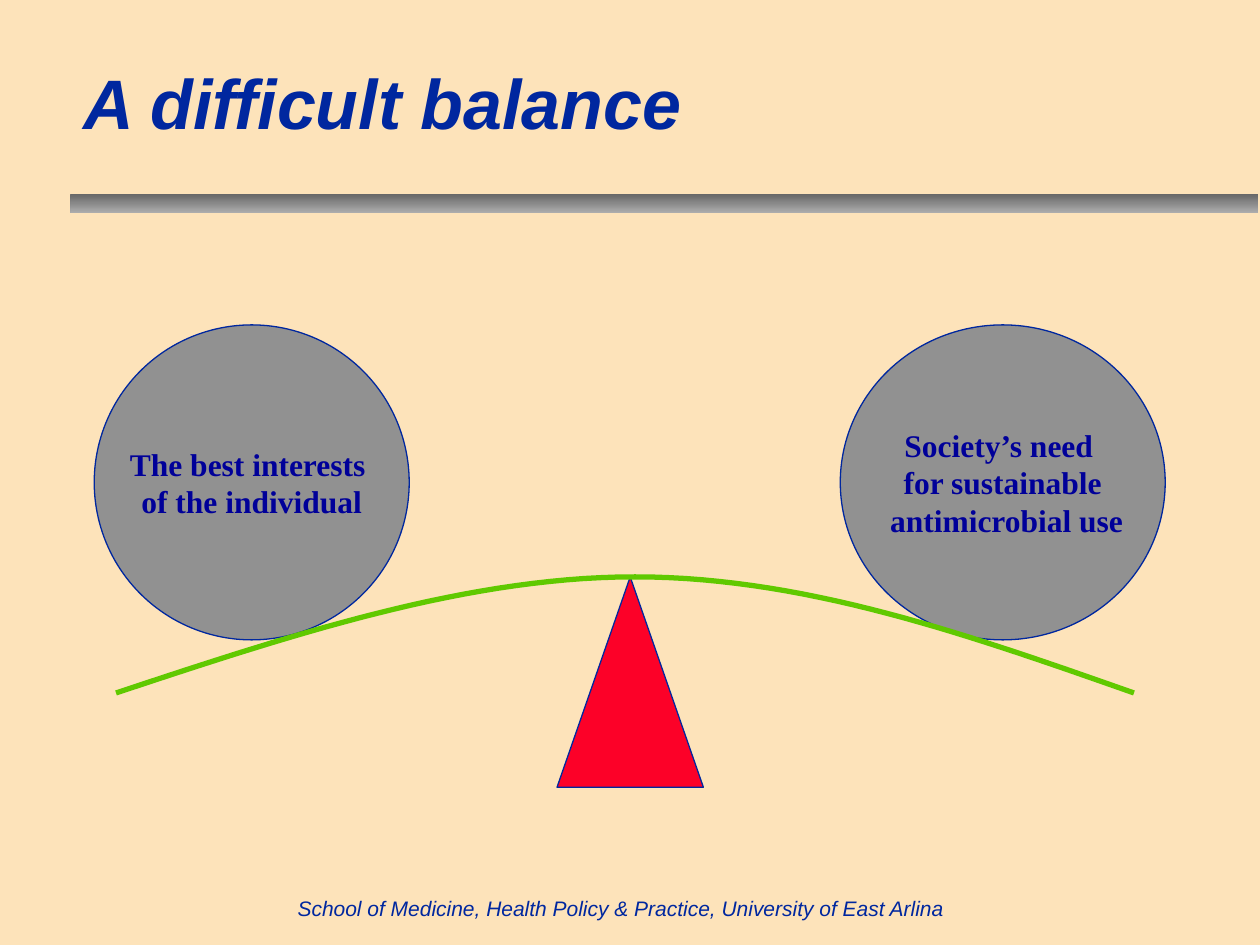
from dataclasses import dataclass

from pptx import Presentation
from pptx import util as u
from pptx.dml import color as dml
from pptx.enum import shapes, text


@dataclass(frozen=True)
class Theme:
    paper: str = "FDE3BA"
    navy: str = "00279F"
    label: str = "000099"
    weight: str = "919191"
    pivot: str = "FC0128"
    beam: str = "60C900"
    bar_top: str = "666666"
    bar_bottom: str = "ACACAC"
    sans: str = "Arial"
    serif: str = "Times New Roman"
    title_size: int = 40
    label_size: int = 18
    footer_size: int = 12
    outline: float = 0.75
    beam_width: int = 3


def rgb(value):
    return dml.RGBColor.from_string(value)


def apply(target, values):
    for name, value in values.items():
        setattr(target, name, value)


def curve_point(controls, t):
    weights = ((1 - t) ** 3, 3 * t * (1 - t) ** 2, 3 * t * t * (1 - t), t ** 3)
    return tuple(
        u.Cm(sum(w * point[axis] for w, point in zip(weights, controls)))
        for axis in (0, 1)
    )


class SlideBuilder:
    def __init__(self, deck, theme):
        self.theme = theme
        self.page = deck.slides.add_slide(deck.slide_layouts[5])
        background = self.page.background.fill
        background.solid()
        background.fore_color.rgb = rgb(theme.paper)

    def set_text(self, box, lines, align, frame, font, color):
        apply(box.text_frame, frame)
        box.text_frame.text = "\n".join(lines)
        for para in box.text_frame.paragraphs:
            para.alignment = align
            for span in para.runs:
                apply(span.font, font)
                span.font.color.rgb = rgb(color)

    def title(self, words, area):
        box = self.page.shapes.title
        apply(box, dict(zip(("left", "top", "width", "height"), map(u.Cm, area))))
        frame = {"vertical_anchor": text.MSO_ANCHOR.MIDDLE,
                 "auto_size": text.MSO_AUTO_SIZE.NONE, "word_wrap": True}
        font = {"name": self.theme.sans, "size": u.Pt(self.theme.title_size),
                "bold": True, "italic": True}
        self.set_text(box, [words], text.PP_ALIGN.LEFT, frame, font, self.theme.navy)

    def footer(self, words, area):
        box = self.page.shapes.add_textbox(*map(u.Cm, area))
        font = {"name": self.theme.sans, "size": u.Pt(self.theme.footer_size),
                "italic": True}
        self.set_text(box, [words], text.PP_ALIGN.CENTER, {"word_wrap": True},
                      font, self.theme.navy)

    def bar(self, area):
        box = self.page.shapes.add_shape(shapes.MSO_SHAPE.RECTANGLE, *map(u.Cm, area))
        box.shadow.inherit = False
        box.line.fill.background()
        box.fill.gradient()
        box.fill.gradient_angle = 270
        colors = (self.theme.bar_top, self.theme.bar_bottom)
        for stop, color in zip(box.fill.gradient_stops, colors):
            stop.color.rgb = rgb(color)

    def solid(self, kind, area, color):
        box = self.page.shapes.add_shape(kind, *map(u.Cm, area))
        box.shadow.inherit = False
        box.fill.solid()
        box.fill.fore_color.rgb = rgb(color)
        box.line.color.rgb = rgb(self.theme.navy)
        box.line.width = u.Pt(self.theme.outline)
        return box

    def pivot(self, area):
        self.solid(shapes.MSO_SHAPE.ISOSCELES_TRIANGLE, area, self.theme.pivot)

    def weight(self, lines, area):
        box = self.solid(shapes.MSO_SHAPE.OVAL, area, self.theme.weight)
        frame = {"vertical_anchor": text.MSO_ANCHOR.MIDDLE, "word_wrap": False}
        font = {"name": self.theme.serif, "size": u.Pt(self.theme.label_size),
                "bold": True}
        self.set_text(box, lines, text.PP_ALIGN.CENTER, frame, font, self.theme.label)

    def beam(self, halves, steps=30):
        points = [curve_point(half, step / steps)
                  for half in halves for step in range(1, steps + 1)]
        start = curve_point(halves[0], 0)
        outline = self.page.shapes.build_freeform(*start)
        outline.add_line_segments(points, close=False)
        curve = outline.convert_to_shape()
        curve.shadow.inherit = False
        curve.fill.background()
        curve.line.color.rgb = rgb(self.theme.beam)
        curve.line.width = u.Pt(self.theme.beam_width)


def main():
    deck = Presentation()
    apply(deck, {"slide_width": u.Cm(25.4), "slide_height": u.Cm(19.05)})
    slide = SlideBuilder(deck, Theme())
    slide.bar((1.42, 3.91, 23.95, 0.38))
    slide.footer("School of Medicine, Health Policy & Practice, University of East Arlina",
                 (0.05, 17.93, 24.94, 0.76))
    slide.title("A difficult balance", (1.42, 0.43, 22.56, 3.23))
    slide.pivot((11.23, 11.63, 2.95, 4.24))
    slide.weight(["The best interests ", "of the individual"], (1.9, 6.55, 6.35, 6.35))
    slide.weight(["Society’s need ", "for sustainable", " antimicrobial use"],
                 (16.94, 6.55, 6.55, 6.35))
    top = (12.8, 11.63)
    slide.beam([
        ((2.34, 13.97), (5.87, 12.8), (9.4, 11.63), top),
        (top, (16.23, 11.63), (19.53, 12.8), (22.86, 13.97)),
    ])
    deck.save("out.pptx")


if __name__ == "__main__":
    main()
